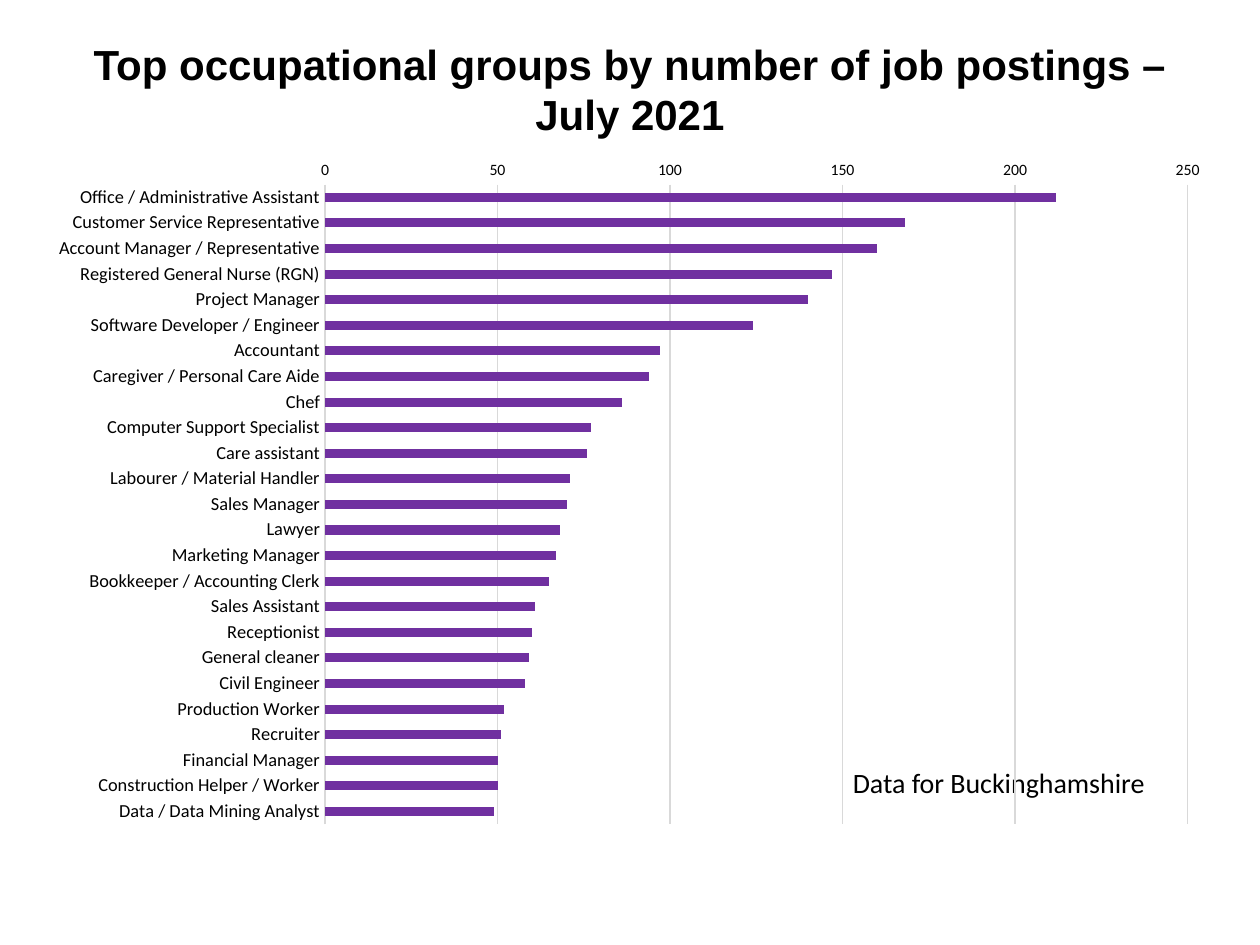
from pptx import Presentation
from pptx.chart.data import CategoryChartData
from pptx.dml.color import RGBColor
from pptx.enum.chart import XL_CHART_TYPE as ChartType, XL_TICK_MARK as Tick
from pptx.enum.text import MSO_ANCHOR as Anchor, PP_ALIGN as Align
from pptx.oxml import parse_xml
from pptx.oxml.ns import nsdecls
from pptx.util import Inches, Pt

TITLE = "Top occupational groups by number of job postings – July 2021"
REGION = "Data for Buckinghamshire"
POSTINGS = [
    ("Office / Administrative Assistant", 212),
    ("Customer Service Representative", 168),
    ("Account Manager / Representative", 160),
    ("Registered General Nurse (RGN)", 147),
    ("Project Manager", 140),
    ("Software Developer / Engineer", 124),
    ("Accountant", 97),
    ("Caregiver / Personal Care Aide", 94),
    ("Chef", 86),
    ("Computer Support Specialist", 77),
    ("Care assistant", 76),
    ("Labourer / Material Handler", 71),
    ("Sales Manager", 70),
    ("Lawyer", 68),
    ("Marketing Manager", 67),
    ("Bookkeeper / Accounting Clerk", 65),
    ("Sales Assistant", 61),
    ("Receptionist", 60),
    ("General cleaner", 59),
    ("Civil Engineer", 58),
    ("Production Worker", 52),
    ("Recruiter", 51),
    ("Financial Manager", 50),
    ("Construction Helper / Worker", 50),
    ("Data / Data Mining Analyst", 49),
]
COLORS = {"text": "000000", "bar": "7030A0", "grid": "D9D9D9"}
WIDTH, HEIGHT = 10, 7.5
TITLE_BOX = (0.05, 0.01, 0.9, 0.167)
REGION_BOX = (0.667, 0.803, 0.378, 0.05)
CHART_BOX = (0.028, 0.156, 0.943, 0.731)


def place(shares):
    return [Inches(share * side) for share, side in zip(shares, (WIDTH, HEIGHT) * 2)]


def color(key):
    return RGBColor.from_string(COLORS[key])


def style_font(font, size, family="Calibri", bold=False):
    font.name, font.size, font.bold = family, Pt(size), bold
    font.color.rgb = color("text")


def style_line(line):
    line.color.rgb = color("grid")
    line.width = Pt(0.75)


def add_text(slide, shares, text, size, family="Calibri", bold=False,
             align=Align.LEFT, anchor=Anchor.TOP):
    frame = slide.shapes.add_textbox(*place(shares)).text_frame
    frame.word_wrap = True
    frame.vertical_anchor = anchor
    frame.text = text
    paragraph = frame.paragraphs[0]
    paragraph.alignment = align
    style_font(paragraph.runs[0].font, size, family, bold)


def add_postings_chart(slide):
    data = CategoryChartData(number_format="#,##0")
    data.categories = [group for group, _ in POSTINGS]
    data.add_series("Series 1", [count for _, count in POSTINGS])
    chart = slide.shapes.add_chart(ChartType.BAR_CLUSTERED, *place(CHART_BOX), data).chart
    chart.has_legend = chart.has_title = False
    style_font(chart.font, 10)
    clear_fill = parse_xml(
        f"<c:spPr {nsdecls('c', 'a')}><a:noFill/><a:ln><a:noFill/></a:ln></c:spPr>")
    chart.font._element.getparent().getparent().getparent().addprevious(clear_fill)

    plot = chart.plots[0]
    plot.gap_width = 182
    plot.vary_by_categories = False
    bars = plot.series[0].format.fill
    bars.solid()
    bars.fore_color.rgb = color("bar")

    groups, counts = chart.category_axis, chart.value_axis
    for axis, size in ((groups, 10.5), (counts, 9)):
        axis.major_tick_mark = axis.minor_tick_mark = Tick.NONE
        style_font(axis.tick_labels.font, size)
    groups.reverse_order = True
    style_line(groups.format.line)
    counts.minimum_scale, counts.maximum_scale, counts.major_unit = 0, 250, 50
    counts.tick_labels.number_format = "#,##0"
    counts.tick_labels.number_format_is_linked = False
    counts.format.line.fill.background()
    style_line(counts.major_gridlines.format.line)


def main():
    deck = Presentation()
    deck.slide_width, deck.slide_height = Inches(WIDTH), Inches(HEIGHT)
    slide = deck.slides.add_slide(deck.slide_layouts[6])
    add_text(slide, TITLE_BOX, TITLE, 24, "Arial", True, Align.CENTER, Anchor.MIDDLE)
    add_text(slide, REGION_BOX, REGION, 16)
    add_postings_chart(slide)
    deck.save("out.pptx")


if __name__ == "__main__":
    main()
